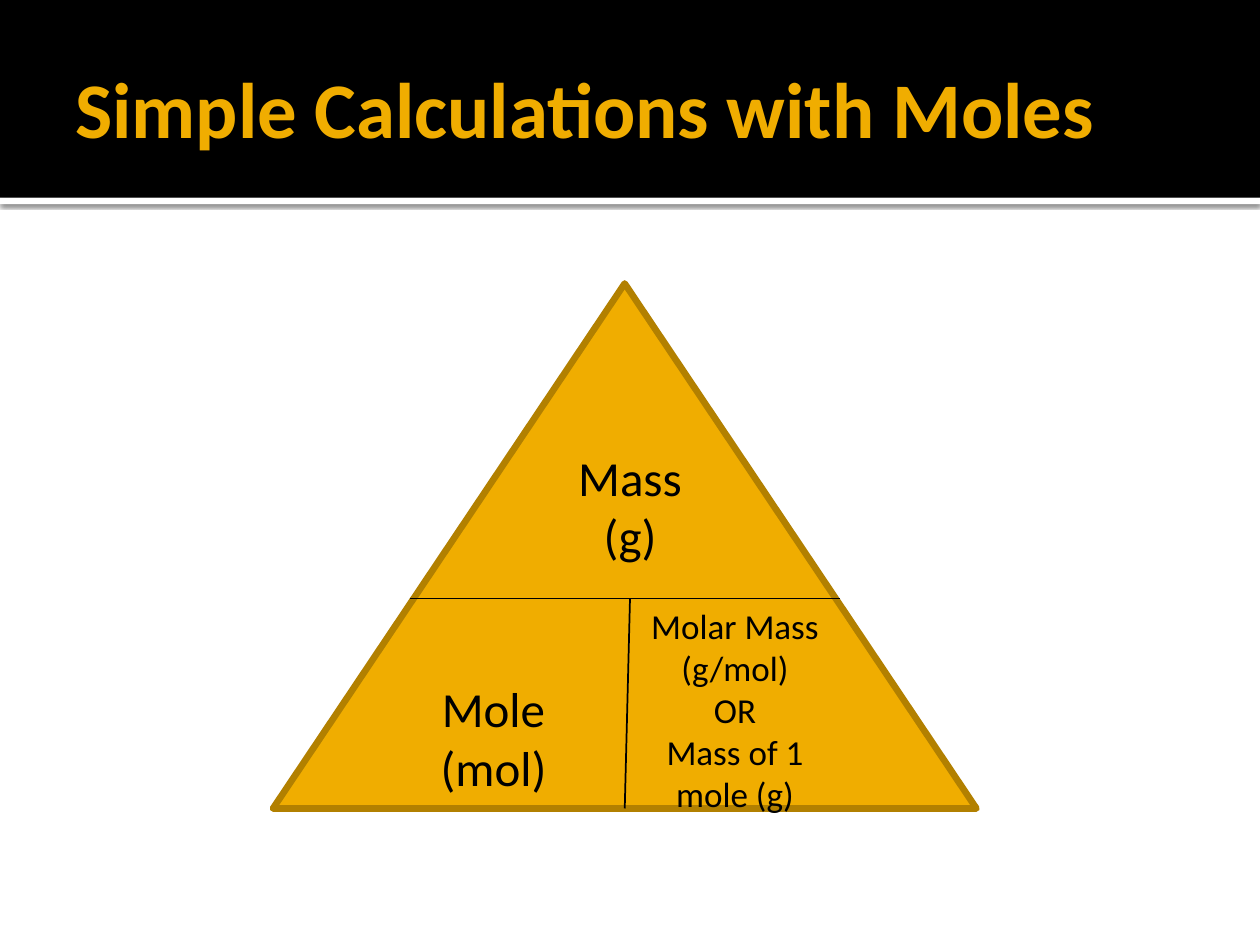
from dataclasses import dataclass

from lxml import etree
from pptx import Presentation
from pptx import util as u
from pptx.dml.color import RGBColor
from pptx.enum import shapes, text
from pptx.oxml.ns import qn

COLUMNS, ROWS = 120, 90  # grid cells of 1/12 inch
CELL = u.Inches(10) // COLUMNS
BLACK, WHITE, AMBER, BRONZE = "000000", "FFFFFF", "F0AD00", "B28000"
BAND_HEIGHT = 18.84
DIVIDER_ROW, BASE_ROW = 57, 77


@dataclass
class Box:
    column: float
    row: float
    columns: float
    rows: float

    def lengths(self) -> list[int]:
        return [cells(n) for n in (self.column, self.row, self.columns, self.rows)]


@dataclass
class Label:
    box: Box
    lines: list[str]
    size: int


@dataclass
class Divider:
    start: tuple[float, float]
    end: tuple[float, float]


def cells(count: float) -> int:
    return round(count * CELL)


def color(value: str) -> RGBColor:
    return RGBColor.from_string(value)


def draw_shape(slide, kind, box: Box, fill: str, outline: str = "", weight: float = 0):
    shape = slide.shapes.add_shape(kind, *box.lengths())
    shape.fill.solid()
    shape.fill.fore_color.rgb = color(fill)
    if outline:
        shape.line.color.rgb = color(outline)
        shape.line.width = u.Pt(weight)
        etree.SubElement(shape.line._get_or_add_ln(), qn("a:round"))
    else:
        shape.line.fill.background()
    shape.shadow.inherit = False
    return shape


def add_soft_shadow(shape) -> None:
    effects = shape._element.spPr.find(qn("a:effectLst"))
    shadow = etree.SubElement(effects, qn("a:outerShdw"), blurRad=str(u.Pt(2.5)),
                              dist=str(u.Pt(0.8)), dir="5400000", algn="tl", rotWithShape="0")
    tint = etree.SubElement(shadow, qn("a:srgbClr"), val=BLACK)
    etree.SubElement(tint, qn("a:alpha"), val="60000")


def draw_label(slide, label: Label, ink: str = BLACK, bold: bool = False,
               align=text.PP_ALIGN.CENTER):
    frame = slide.shapes.add_textbox(*label.box.lengths()).text_frame
    frame.word_wrap = True
    frame.text = "\n".join(label.lines)
    for paragraph in frame.paragraphs:
        paragraph.alignment = align
        font = paragraph.runs[0].font
        font.name, font.size, font.bold = "Calibri", u.Pt(label.size), bold
        font.color.rgb = color(ink)
    return frame


def draw_divider(slide, divider: Divider) -> None:
    ends = [cells(n) for n in divider.start + divider.end]
    line = slide.shapes.add_connector(shapes.MSO_CONNECTOR.STRAIGHT, *ends)
    line.line.color.rgb = color(BLACK)
    line.line.width = u.Pt(1)
    etree.SubElement(line._element.spPr, qn("a:effectLst"))


def main() -> None:
    deck = Presentation()
    deck.slide_width, deck.slide_height = cells(COLUMNS), cells(ROWS)
    slide = deck.slides.add_slide(deck.slide_layouts[6])
    rectangle = shapes.MSO_SHAPE.RECTANGLE

    # Header band with its shadowed white rule
    rule = draw_shape(slide, rectangle, Box(0, BAND_HEIGHT, COLUMNS, 0.6), WHITE)
    add_soft_shadow(rule)
    draw_shape(slide, rectangle, Box(0, 0, COLUMNS, BAND_HEIGHT), BLACK)

    # Title
    heading = Label(Box(6, 2, 108, 16.4), ["Simple Calculations with Moles"], 45)
    title = draw_label(slide, heading, AMBER, True, text.PP_ALIGN.LEFT)
    title.vertical_anchor = text.MSO_ANCHOR.MIDDLE
    title.margin_right = u.Inches(0.05)

    # Formula triangle, split into three fields
    draw_shape(slide, shapes.MSO_SHAPE.ISOSCELES_TRIANGLE,
               Box(26, 27, 67, BASE_ROW - 27), AMBER, BRONZE, 3.78)
    for divider in (Divider((39, DIVIDER_ROW), (80, DIVIDER_ROW)),
                    Divider((60, DIVIDER_ROW), (59.5, BASE_ROW))):
        draw_divider(slide, divider)

    # Quantity in each field
    for quantity in (
        Label(Box(51, 42, 18, 12.5), ["Mass (g)"], 28),
        Label(Box(38, 64, 18, 12.5), ["Mole (mol)"], 28),
        Label(Box(59, DIVIDER_ROW, 22, 21.4),
              ["Molar Mass (g/mol)", "OR", "Mass of 1 mole (g)"], 20),
    ):
        frame = draw_label(slide, quantity)
        frame.auto_size = text.MSO_AUTO_SIZE.SHAPE_TO_FIT_TEXT

    deck.save("out.pptx")


if __name__ == "__main__":
    main()
